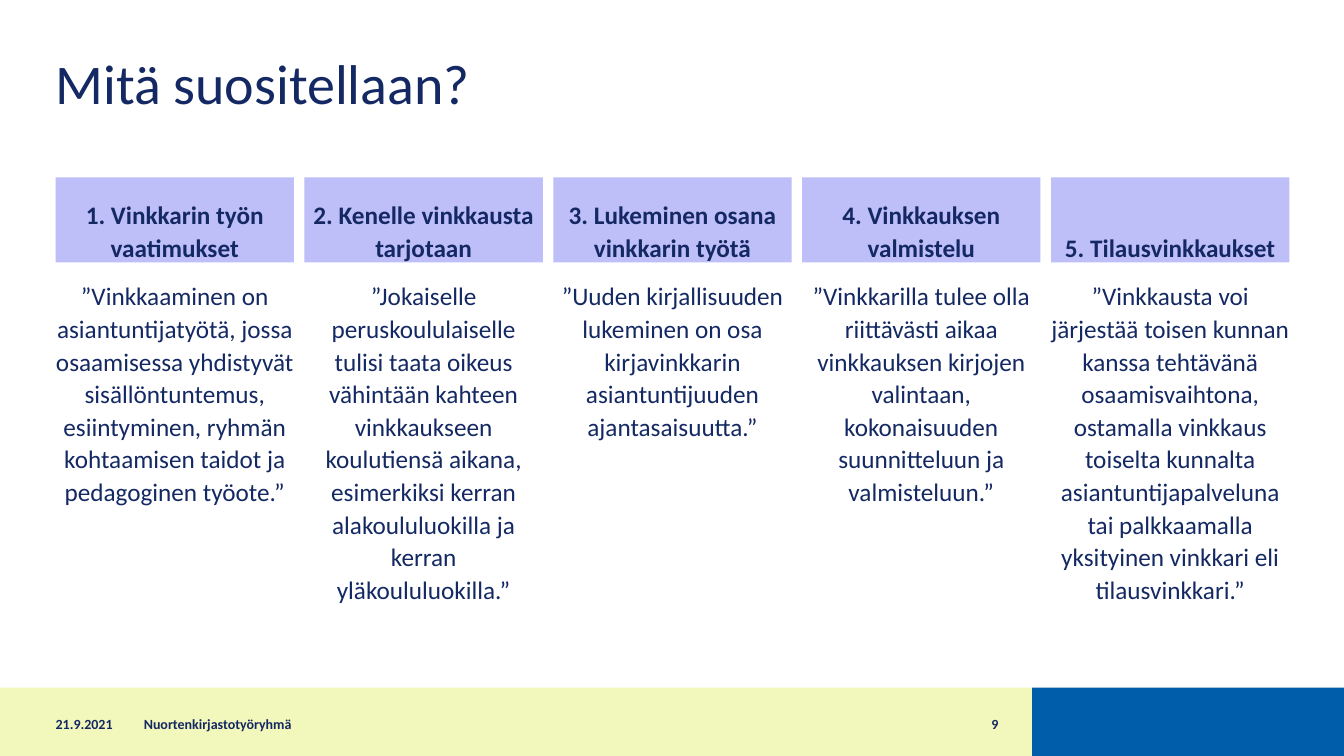
from pptx import Presentation
from pptx.dml.color import RGBColor
from pptx.enum.shapes import MSO_SHAPE
from pptx.enum.text import MSO_ANCHOR, MSO_AUTO_SIZE, PP_ALIGN
from pptx.util import Pt

PX = 9525
WIDTH, HEIGHT = 1280, 720
MARGIN = 53
FONT = "Calibri"
NAVY, FOOTER_NAVY = "142963", "142862"
LILAC, LIME, BLUE = "BEBEF8", "F2F7BC", "005DA9"

COLUMNS = [
    ("1. Vinkkarin työn vaatimukset",
     "”Vinkkaaminen on asiantuntijatyötä, jossa osaamisessa yhdistyvät "
     "sisällöntuntemus, esiintyminen, ryhmän kohtaamisen taidot ja "
     "pedagoginen työote.”"),
    ("2. Kenelle vinkkausta tarjotaan",
     "”Jokaiselle peruskoululaiselle tulisi taata oikeus vähintään kahteen "
     "vinkkaukseen koulutiensä aikana, esimerkiksi kerran alakoululuokilla "
     "ja kerran yläkoululuokilla.”"),
    ("3. Lukeminen osana vinkkarin työtä",
     "”Uuden kirjallisuuden lukeminen on osa kirjavinkkarin "
     "asiantuntijuuden ajantasaisuutta.”"),
    ("4. Vinkkauksen valmistelu",
     "”Vinkkarilla tulee olla riittävästi aikaa vinkkauksen kirjojen "
     "valintaan, kokonaisuuden suunnitteluun ja valmisteluun.”"),
    ("5. Tilausvinkkaukset",
     "”Vinkkausta voi järjestää toisen kunnan kanssa tehtävänä "
     "osaamisvaihtona, ostamalla vinkkaus toiselta kunnalta "
     "asiantuntijapalveluna tai palkkaamalla yksityinen vinkkari eli "
     "tilausvinkkari.”"),
]


def color(hex_value):
    return RGBColor.from_string(hex_value)


def emu(*lengths):
    return [length * PX for length in lengths]


def add_rect(s, x, y, w, h, fill):
    sp = s.shapes.add_shape(MSO_SHAPE.RECTANGLE, *emu(x, y, w, h))
    sp.shadow.inherit = False
    sp.fill.solid()
    sp.fill.fore_color.rgb = color(fill)
    sp.line.fill.background()
    return sp


def add_textbox(s, x, y, w, h):
    return s.shapes.add_textbox(*emu(x, y, w, h))


def write(sp, text, size, hex_value=NAVY, bold=False, align=PP_ALIGN.LEFT,
          anchor=MSO_ANCHOR.TOP, spacing=1.0):
    tf = sp.text_frame
    tf.word_wrap = True
    tf.auto_size = MSO_AUTO_SIZE.NONE
    tf.vertical_anchor = anchor
    tf.margin_left = tf.margin_top = tf.margin_right = tf.margin_bottom = 0
    p = tf.paragraphs[0]
    p.alignment = align
    p.line_spacing = spacing
    p.space_before = Pt(0)
    r = p.add_run()
    r.text = text
    r.font.name = FONT
    r.font.size = Pt(size)
    r.font.bold = bold
    r.font.color.rgb = color(hex_value)


def place_title(s, x, y, w, h):
    sp = s.shapes.title
    sp.left, sp.top, sp.width, sp.height = emu(x, y, w, h)
    write(sp, "Mitä suositellaan?", 40, spacing=0.9)


def add_columns(s, x, y, w, h):
    gap, head_h, body_offset = 10, 81, 96
    col_w = (w - gap * (len(COLUMNS) - 1)) // len(COLUMNS)
    for i, (heading, quote) in enumerate(COLUMNS):
        left = x + i * (col_w + gap)
        head = add_rect(s, left, y, col_w, head_h, LILAC)
        write(head, heading, 18, bold=True, align=PP_ALIGN.CENTER,
              anchor=MSO_ANCHOR.BOTTOM, spacing=1.08)
        body = add_textbox(s, left, y + body_offset, col_w, h - body_offset)
        write(body, quote, 18, align=PP_ALIGN.CENTER, spacing=1.08)


def add_footer(s, x, y, w, h):
    blue_w = 297
    add_rect(s, x, y, w - blue_w, h, LIME)
    add_rect(s, x + w - blue_w, y, blue_w, h, BLUE)
    for left, width, text, align in [
        (MARGIN, 73, "21.9.2021", PP_ALIGN.LEFT),
        (137, 503, "Nuortenkirjastotyöryhmä", PP_ALIGN.LEFT),
        (895, 56, "9", PP_ALIGN.RIGHT),
    ]:
        sp = add_textbox(s, x + left, y + 22, width, 25)
        write(sp, text, 10, FOOTER_NAVY, True, align, MSO_ANCHOR.MIDDLE)


def main():
    prs = Presentation()
    prs.slide_width, prs.slide_height = emu(WIDTH, HEIGHT)
    s = prs.slides.add_slide(prs.slide_layouts[5])
    add_footer(s, 0, 655, WIDTH, 65)
    place_title(s, MARGIN, 53, 1175, 67)
    add_columns(s, MARGIN, 169, 1175, 402)
    prs.save("out.pptx")


if __name__ == "__main__":
    main()
